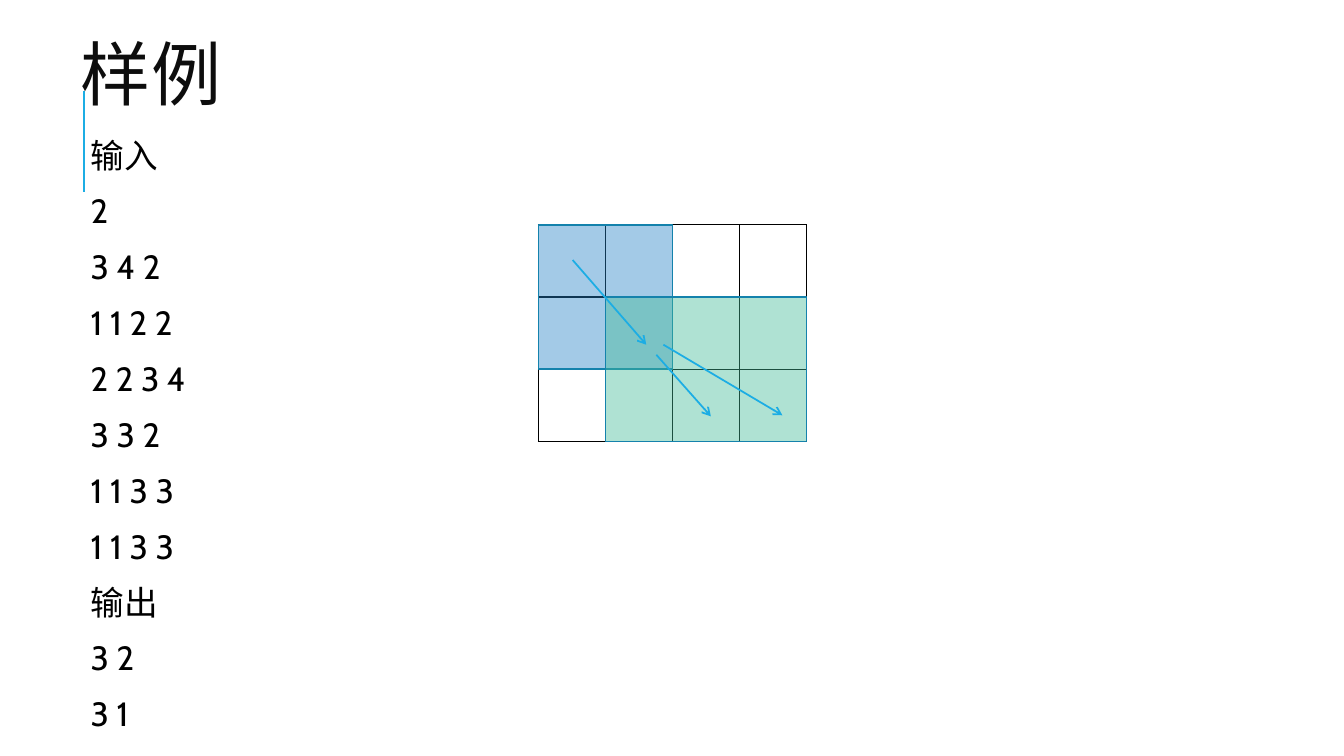
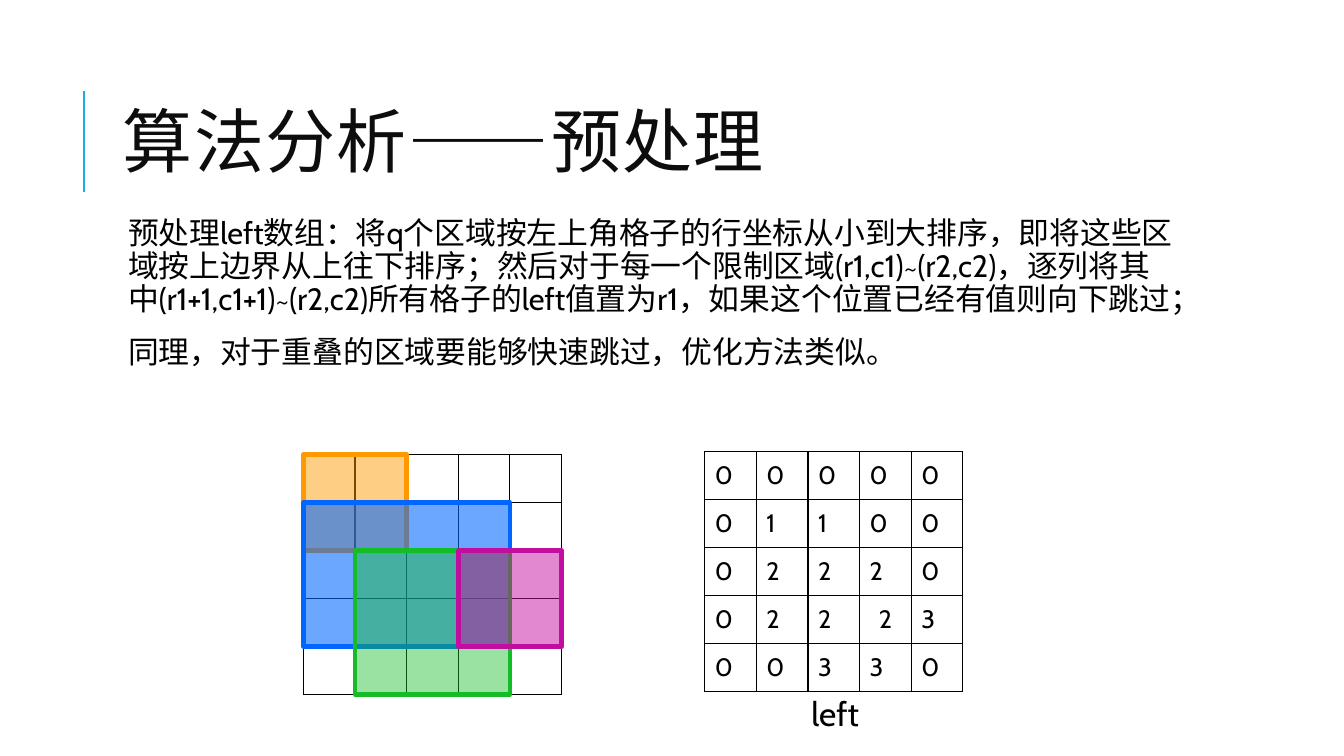
from dataclasses import dataclass

from lxml.etree import SubElement
from pptx import Presentation
from pptx.dml.color import RGBColor
from pptx.enum.shapes import MSO_CONNECTOR as CONNECTOR, MSO_SHAPE as SHAPE
from pptx.enum.text import MSO_ANCHOR as ANCHOR, MSO_AUTO_SIZE as FIT, PP_ALIGN as ALIGN
from pptx.oxml import parse_xml
from pptx.oxml.ns import nsdecls, qn
from pptx.util import Pt

EMU_PER_PX = 9144
BLANK_LAYOUT = 6


@dataclass(frozen=True)
class Theme:
    accent: str = "1CADE4"
    outline: str = "1482AC"
    title_color: str = "0D0D0D"
    ink: str = "000000"
    sky: str = "2683C6"
    mint: str = "42BA97"
    orange: str = "FF9900"
    blue: str = "0066FF"
    green: str = "14BC28"
    magenta: str = "C20EA0"
    title_font: str = "Calibri"
    body_font: str = "Cabin"
    title_size: int = 50
    body_size: int = 24
    dense_size: int = 22
    cell_size: int = 18
    border: float = 1
    thin: float = 1.25
    rule: float = 1.5
    thick: float = 3.25


@dataclass(frozen=True)
class Grid:
    left: int
    top: int
    width: int
    height: int
    rows: int
    cols: int

    def area(self, row, col, rows, cols):
        """Box in px that covers a block of cells."""
        cell_width, cell_height = self.width / self.cols, self.height / self.rows
        return (self.left + col * cell_width, self.top + row * cell_height,
                cols * cell_width, rows * cell_height)


def emu(*lengths):
    return [round(length * EMU_PER_PX) for length in lengths]


def apply(target, **values):
    for name, value in values.items():
        setattr(target, name, value)


class DeckBuilder:
    def __init__(self, theme, width, height):
        self.theme = theme
        self.deck = Presentation()
        self.deck.slide_width, self.deck.slide_height = emu(width, height)
        self.page = None

    def add_page(self, title, title_box):
        theme = self.theme
        self.page = self.deck.slides.add_slide(self.deck.slide_layouts[BLANK_LAYOUT])
        self.line((83, 190), (83, 90), theme.rule)
        frame = self.text(title_box, [title], theme.title_size, theme.title_font,
                          theme.title_color, {"line_spacing": 0.8}, spacing=100)
        frame.vertical_anchor = ANCHOR.MIDDLE

    def style_span(self, span, size, font, color):
        apply(span.font, size=Pt(size), name=font)
        span.font.color.rgb = RGBColor.from_string(color)

    def text(self, area, lines, size, font=None, color=None, para_format=None, spacing=None):
        """Spacing is the gap between letters in hundredths of a point."""
        frame = self.page.shapes.add_textbox(*emu(*area)).text_frame
        apply(frame, word_wrap=True, auto_size=FIT.NONE)
        for index, line in enumerate(lines):
            para = frame.add_paragraph() if index else frame.paragraphs[0]
            apply(para, **(para_format or {}))
            span = para.add_run()
            span.text = line
            self.style_span(span, size, font or self.theme.body_font, color or self.theme.ink)
            if spacing:
                span.font._element.set("spc", str(spacing))
        return frame

    def body(self, area, lines, size, inset=5):
        para_format = {"line_spacing": 0.9, "space_before": Pt(12), "space_after": Pt(2)}
        frame = self.text(area, lines, size, para_format=para_format)
        left, edge = emu(inset, 5)
        apply(frame, margin_left=left, margin_right=edge, margin_top=edge, margin_bottom=edge)

    def caption(self, area, words):
        frame = self.text(area, [words], self.theme.body_size)
        frame.auto_size = FIT.SHAPE_TO_FIT_TEXT

    def line(self, start, end, weight, arrow=False):
        link = self.page.shapes.add_connector(CONNECTOR.STRAIGHT, *emu(*start, *end))
        link.line.color.rgb = RGBColor.from_string(self.theme.accent)
        link.line.width = Pt(weight)
        outline = link.element.spPr.find(qn("a:ln"))
        if arrow:
            SubElement(outline, qn("a:tailEnd"), type="arrow")
        SubElement(link.element.spPr, qn("a:effectLst"))

    def region(self, area, color, opacity, outline, weight):
        """Translucent rectangle; opacity is a percentage."""
        shape = self.page.shapes.add_shape(SHAPE.RECTANGLE, *emu(*area))
        shape.shadow.inherit = False
        shape.fill.solid()
        shape.fill.fore_color.rgb = RGBColor.from_string(color)
        tint = shape.element.spPr.find(qn("a:solidFill"))[0]
        SubElement(tint, qn("a:alpha"), val=str(opacity * 1000))
        shape.line.color.rgb = RGBColor.from_string(outline)
        shape.line.width = Pt(weight)

    def table(self, grid, values=None, centered=()):
        area = emu(grid.left, grid.top, grid.width, grid.height)
        table = self.page.shapes.add_table(grid.rows, grid.cols, *area).table
        apply(table, first_row=False, horz_banding=False)
        for column in table.columns:
            column.width = round(area[2] / grid.cols)
        for row in table.rows:
            row.height = round(area[3] / grid.rows)
        for row in range(grid.rows):
            for col in range(grid.cols):
                cell = table.cell(row, col)
                cell.fill.background()
                self.cell_borders(cell)
                if values:
                    cell.vertical_anchor = ANCHOR.MIDDLE
                    para = cell.text_frame.paragraphs[0]
                    para.alignment = ALIGN.CENTER if (row, col) in centered else ALIGN.LEFT
                    span = para.add_run()
                    span.text = values[row][col]
                    self.style_span(span, self.theme.cell_size, self.theme.body_font,
                                    self.theme.ink)

    def cell_borders(self, cell):
        properties = cell._tc.get_or_add_tcPr()
        for index, side in enumerate(("lnL", "lnR", "lnT", "lnB")):
            properties.insert(index, parse_xml(
                f'<a:{side} {nsdecls("a")} w="{Pt(self.theme.border)}"><a:solidFill>'
                f'<a:srgbClr val="{self.theme.ink}"/></a:solidFill></a:{side}>'))


def add_sample_page(builder):
    theme = builder.theme
    builder.add_page("样例", (70, 7, 1150, 145))
    builder.body((85, 133, 407, 558), [
        "输入", "2", "3 4 2", "1 1 2 2", "2 2 3 4", "3 3 2", "1 1 3 3", "1 1 3 3",
        "输出", "3 2", "3 1"], theme.body_size)
    grid = Grid(534, 223, 266, 215, rows=3, cols=4)
    builder.table(grid)
    for cells, color in (((0, 0, 2, 2), theme.sky), ((1, 1, 2, 3), theme.mint)):
        builder.region(grid.area(*cells), color, 42, theme.outline, theme.thin)
    for start, end in (((568, 258), (641, 342)),
                       ((651, 352), (705, 413)),
                       ((658, 342), (776, 412))):
        builder.line(start, end, theme.thin, arrow=True)


def add_preprocessing_page(builder):
    theme = builder.theme
    builder.add_page("算法分析——预处理", (112, 64, 1063, 164))
    builder.body((112, 211, 1063, 440), [
        "预处理left数组：将q个区域按左上角格子的行坐标从小到大排序，即将这些区域按上边界从上往下排序；"
        "然后对于每一个限制区域(r1,c1)~(r2,c2)，逐列将其中(r1+1,c1+1)~(r2,c2)所有格子的left值置为r1，"
        "如果这个位置已经有值则向下跳过；",
        "同理，对于重叠的区域要能够快速跳过，优化方法类似。"], theme.dense_size, inset=15)
    grid = Grid(301, 451, 256, 238, rows=5, cols=5)
    builder.table(grid)
    for cells, color, opacity in (((0, 0, 2, 2), theme.orange, 48),
                                  ((1, 0, 3, 4), theme.blue, 58),
                                  ((2, 1, 3, 3), theme.green, 43),
                                  ((2, 3, 2, 2), theme.magenta, 49)):
        builder.region(grid.area(*cells), color, opacity, color, theme.thick)
    left_values = ("00000", "01100", "02220", "02223", "00330")
    builder.table(Grid(699, 448, 256, 238, rows=5, cols=5), left_values, centered={(3, 3)})
    builder.caption((795, 683, 101, 50), "left")


def main():
    builder = DeckBuilder(Theme(), 1333, 750)
    add_sample_page(builder)
    add_preprocessing_page(builder)
    builder.deck.save("out.pptx")


if __name__ == "__main__":
    main()
